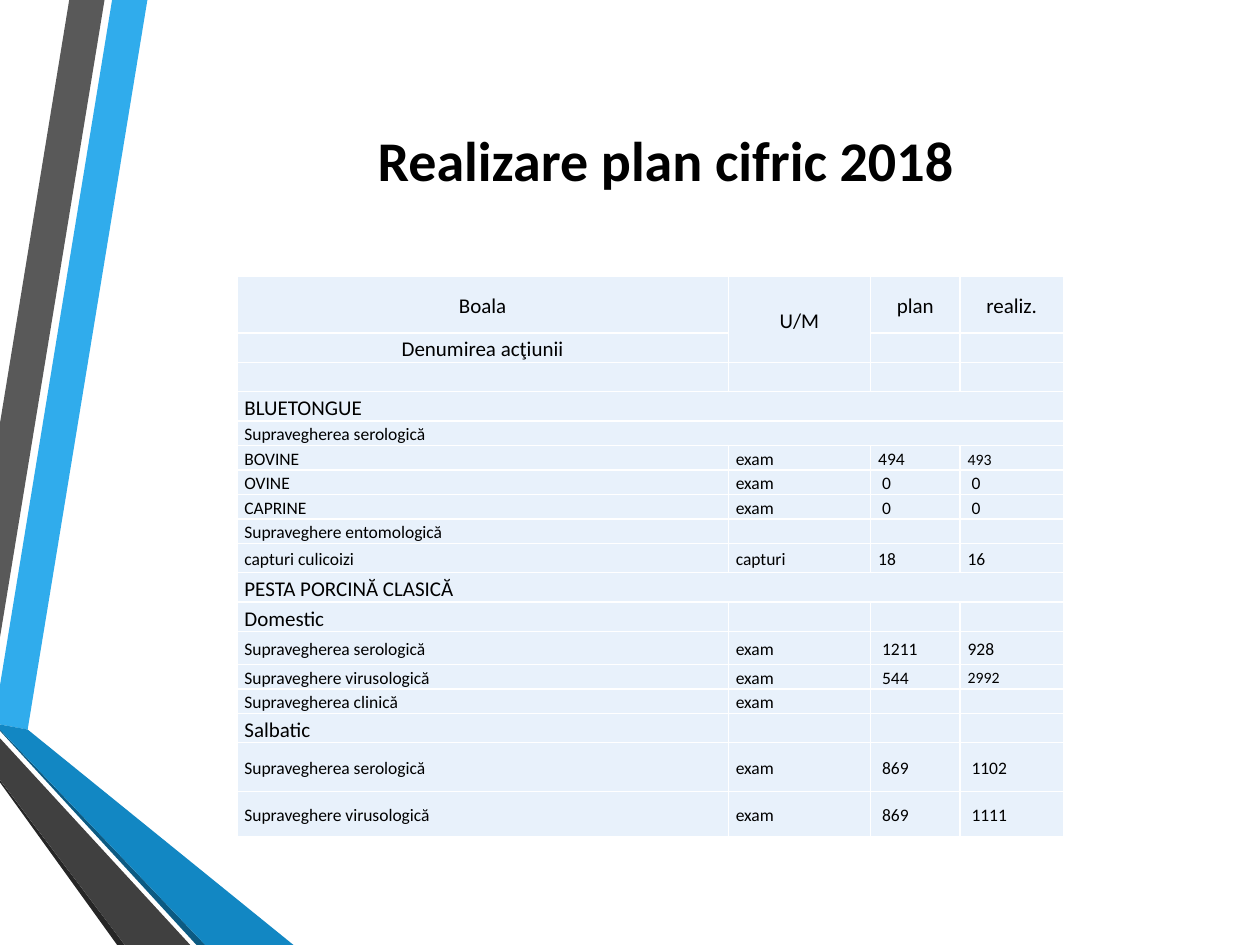
from dataclasses import dataclass

import lxml.etree
import pptx
import pptx.dml.color
import pptx.enum.text
import pptx.oxml.ns
import pptx.util

ALIGN = pptx.enum.text.PP_ALIGN
ANCHOR = pptx.enum.text.MSO_ANCHOR
Pt = pptx.util.Pt
UNIT = 9144  # the slide is a grid of 1000 columns by 750 rows


@dataclass(frozen=True)
class Theme:
    font: str = "Calibri"
    text: str = "000000"
    cell: str = "E8F1FB"
    rule: str = "FFFFFF"
    title: float = 32
    head: float = 12
    body: float = 10
    small: float = 9
    sky: str = "30ACEC"
    blue: str = "1287C3"
    navy: str = "0C5A82"
    grey: str = "595959"
    dark: str = "404040"
    black: str = "262626"


LOOK = Theme()
TALL = 16.8


@dataclass(frozen=True)
class Band:
    fill: str
    points: tuple


@dataclass(frozen=True)
class Row:
    texts: tuple
    height: float = 14  # points
    size: float = LOOK.body
    align: ALIGN = ALIGN.LEFT
    wide: bool = False  # one cell across all columns
    last: float = 0  # type size of the last cell, if it differs
    low: bool = False  # last cell sits at the bottom


BANDS = (
    Band(LOOK.sky, ((0, 544), (0, 575), (22, 579), (117, 0), (89, 0))),
    Band(LOOK.grey, ((83, 0), (55, 0), (0, 336), (0, 506))),
    Band(LOOK.black, ((0, 619), (0, 621), (93, 750), (99, 750))),
    Band(LOOK.navy, ((0, 579), (0, 580), (156, 750), (163, 750))),
    Band(LOOK.blue, ((0, 579), (163, 750), (233, 750), (22, 579), (0, 575))),
    Band(LOOK.dark, ((0, 619), (99, 750), (151, 750), (0, 586))),
)

COLS = (390, 113, 71, 82)
ROWS = (
    Row(("Boala", "U/M", "plan", "realiz."), 32.5, LOOK.head, ALIGN.CENTER),
    Row(("Denumirea acţiunii",), TALL, LOOK.head, ALIGN.CENTER),
    Row((), TALL),
    Row(("BLUETONGUE",), TALL, LOOK.head, ALIGN.JUSTIFY, wide=True),
    Row(("Supravegherea serologică",), align=ALIGN.JUSTIFY, wide=True),
    Row(("BOVINE", "exam", "494", "493"), last=LOOK.small, low=True),
    Row(("OVINE", "exam", " 0", " 0"), low=True),
    Row(("CAPRINE", "exam", " 0", " 0"), low=True),
    Row(("Supraveghere entomologică",)),
    Row(("capturi culicoizi", "capturi", "18", "16"), TALL),
    Row(("PESTA PORCINĂ CLASICĂ",), TALL, LOOK.head, wide=True),
    Row(("Domestic",), TALL, LOOK.head),
    Row(("Supravegherea serologică", "exam", " 1211", "928"), 18.7,
        align=ALIGN.JUSTIFY),
    Row(("Supraveghere virusologică", "exam", " 544", "2992"), last=LOOK.small),
    Row(("Supravegherea clinică", "exam")),
    Row(("Salbatic",), TALL, LOOK.head),
    Row(("Supravegherea serologică", "exam", " 869", " 1102"), 28,
        align=ALIGN.JUSTIFY),
    Row(("Supraveghere virusologică", "exam", " 869", " 1111"), 25.5),
)


def rgb(code: str) -> pptx.dml.color.RGBColor:
    return pptx.dml.color.RGBColor.from_string(code)


def set_font(para, size: float, bold: bool = False) -> None:
    font = para.font
    font.name, font.size, font.bold = LOOK.font, Pt(size), bold
    font.color.rgb = rgb(LOOK.text)


def add_band(slide, band: Band) -> None:
    first, *rest = band.points
    pen = slide.shapes.build_freeform(*first, scale=UNIT)
    pen.add_line_segments(rest, close=True)
    shape = pen.convert_to_shape()
    shape.shadow.inherit = False
    shape.fill.solid()
    shape.fill.fore_color.rgb = rgb(band.fill)
    shape.line.fill.background()


def add_title(slide, text: str) -> None:
    title = slide.shapes.title
    title.left, title.top = 107 * UNIT, 50 * UNIT
    title.width, title.height = 843 * UNIT, 152 * UNIT
    title.text = text
    title.text_frame.vertical_anchor = ANCHOR.MIDDLE
    para = title.text_frame.paragraphs[0]
    para.alignment = ALIGN.CENTER
    set_font(para, LOOK.title, True)


def add_rules(cell) -> None:
    """Draw a thin rule on each side of the cell."""
    qn = pptx.oxml.ns.qn
    props = cell._tc.get_or_add_tcPr()
    for side in ("lnL", "lnR", "lnT", "lnB"):
        line = lxml.etree.SubElement(props, qn(f"a:{side}"), w=str(Pt(1)))
        fill = lxml.etree.SubElement(line, qn("a:solidFill"))
        lxml.etree.SubElement(fill, qn("a:srgbClr"), val=LOOK.rule)


def fill_cell(cell, text: str, size: float, align: ALIGN, anchor: ANCHOR) -> None:
    add_rules(cell)
    cell.fill.solid()
    cell.fill.fore_color.rgb = rgb(LOOK.cell)
    cell.margin_left = cell.margin_right = 6 * UNIT
    cell.margin_top = cell.margin_bottom = 0
    cell.vertical_anchor = anchor
    cell.text = text
    para = cell.text_frame.paragraphs[0]
    set_font(para, size)
    if text:
        para.alignment, para.line_spacing = align, 1.15
    else:
        # an empty line takes its height from the end mark
        lxml.etree.SubElement(para._p, pptx.oxml.ns.qn("a:endParaRPr"),
                              sz=str(int(size * 100)))


def add_grid(slide) -> None:
    high = Pt(sum(row.height for row in ROWS))
    frame = slide.shapes.add_table(len(ROWS), len(COLS), 188 * UNIT, 219 * UNIT,
                                   sum(COLS) * UNIT, high)
    table = frame.table
    table.first_row = table.horz_banding = False
    for col, width in zip(table.columns, COLS):
        col.width = width * UNIT
    end = len(COLS) - 1
    for i, row in enumerate(ROWS):
        table.rows[i].height = Pt(row.height)
        for j in range(len(COLS)):
            text = row.texts[j] if j < len(row.texts) else ""
            size = row.size if text else LOOK.small
            if j == end and row.last:
                size = row.last
            low = j == end and row.low
            fill_cell(table.cell(i, j), text, size, row.align,
                      ANCHOR.BOTTOM if low else ANCHOR.MIDDLE)
        if row.wide:
            table.cell(i, 0).merge(table.cell(i, end))
    table.cell(0, 1).merge(table.cell(1, 1))


def main() -> None:
    deck = pptx.Presentation()
    deck.slide_width, deck.slide_height = 1000 * UNIT, 750 * UNIT
    slide = deck.slides.add_slide(deck.slide_layouts[5])
    for band in BANDS:
        add_band(slide, band)
    add_title(slide, "Realizare plan cifric 2018")
    add_grid(slide)
    deck.save("out.pptx")


if __name__ == "__main__":
    main()
